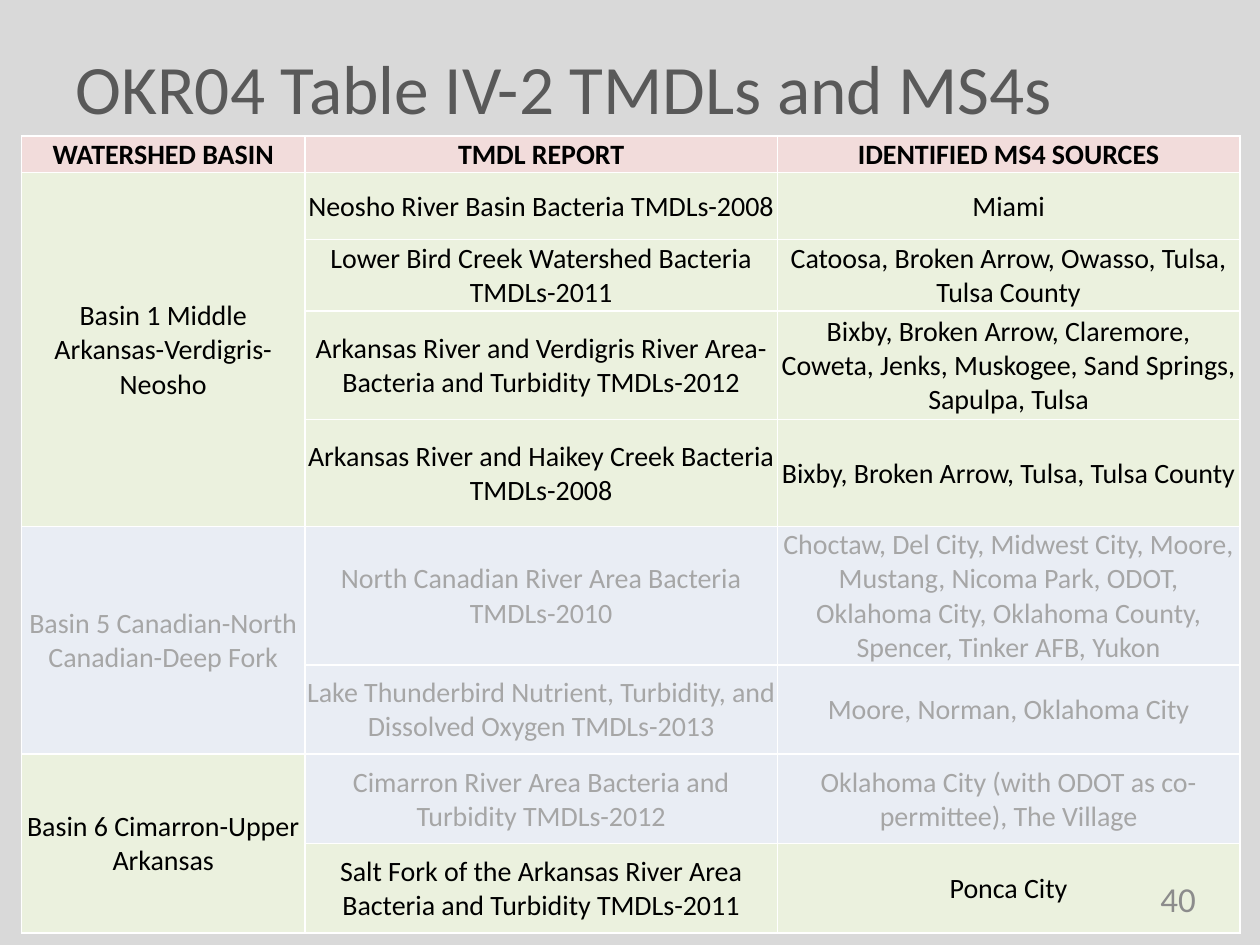
"""Build the slide that lists OKR04 TMDL reports and their MS4 sources by basin."""
from lxml import etree
from pptx import Presentation
from pptx import util as u
from pptx.dml.color import RGBColor
from pptx.enum import text
from pptx.oxml.ns import qn

TITLE = "OKR04 Table IV-2 TMDLs and MS4s"
PAGE = "40"
HEADER = ("WATERSHED BASIN", "TMDL REPORT", "IDENTIFIED MS4 SOURCES")
STYLES = {
    "header": ("F2DCDB", "000000"),
    "active": ("EBF1DE", "000000"),
    "muted": ("E9EDF4", "A6A6A6"),
}
BASINS = [
    ("Basin 1 Middle Arkansas-Verdigris-Neosho", "active", [
        ("Neosho River Basin Bacteria TMDLs-2008", "Miami", "active"),
        ("Lower Bird Creek Watershed Bacteria TMDLs-2011",
         "Catoosa, Broken Arrow, Owasso, Tulsa, Tulsa County", "active"),
        ("Arkansas River and Verdigris River Area-Bacteria and Turbidity TMDLs-2012",
         "Bixby, Broken Arrow, Claremore, Coweta, Jenks, Muskogee, Sand Springs, "
         "Sapulpa, Tulsa", "active"),
        ("Arkansas River and Haikey Creek Bacteria TMDLs-2008",
         "Bixby, Broken Arrow, Tulsa, Tulsa County", "active"),
    ]),
    ("Basin 5 Canadian-North Canadian-Deep Fork", "muted", [
        ("North Canadian River Area Bacteria TMDLs-2010",
         "Choctaw, Del City, Midwest City, Moore, Mustang, Nicoma Park, ODOT, "
         "Oklahoma City, Oklahoma County, Spencer, Tinker AFB, Yukon", "muted"),
        ("Lake Thunderbird Nutrient, Turbidity, and Dissolved Oxygen TMDLs-2013",
         "Moore, Norman, Oklahoma City", "muted"),
    ]),
    ("Basin 6 Cimarron-Upper Arkansas", "active", [
        ("Cimarron River Area Bacteria and Turbidity TMDLs-2012",
         "Oklahoma City (with ODOT as co-permittee), The Village", "muted"),
        ("Salt Fork of the Arkansas River Area Bacteria and Turbidity TMDLs-2011",
         "Ponca City", "active"),
    ]),
]
COL_WIDTHS = (2.25, 3.75, 3.67)
ROW_HEIGHTS = (0.29, 0.53, 0.57, 0.86, 0.85, 1.09, 0.71, 0.71, 0.71)


def rgb(value):
    return RGBColor.from_string(value)


def set_font(p, size, color, bold=False):
    f = p.font
    f.name, f.size, f.bold = "Calibri", u.Pt(size), bold
    f.color.rgb = rgb(color)


def set_borders(cell, color="FFFFFF", width=1):
    pr = cell._tc.get_or_add_tcPr()
    for i, side in enumerate(("a:lnL", "a:lnR", "a:lnT", "a:lnB")):
        ln = etree.Element(qn(side), w=str(u.Pt(width)))
        fill = etree.SubElement(ln, qn("a:solidFill"))
        etree.SubElement(fill, qn("a:srgbClr"), val=color)
        pr.insert(i, ln)


def fill_cell(cell, words, style):
    fill, color = STYLES[style]
    cell.text = words
    cell.fill.solid()
    cell.fill.fore_color.rgb = rgb(fill)
    cell.margin_left = cell.margin_right = cell.margin_top = u.Inches(0.01)
    cell.margin_bottom = 0
    cell.vertical_anchor = text.MSO_ANCHOR.MIDDLE
    p = cell.text_frame.paragraphs[0]
    p.alignment = text.PP_ALIGN.CENTER
    set_font(p, 16, color, style == "header")
    set_borders(cell)


def add_title(s):
    sp = s.shapes.title
    sp.left, sp.top, sp.width, sp.height = map(u.Inches, (0.5, 0.3, 9, 0.78))
    tf = sp.text_frame
    tf.text = TITLE
    tf.auto_size = text.MSO_AUTO_SIZE.NONE
    tf.vertical_anchor = text.MSO_ANCHOR.MIDDLE
    p = tf.paragraphs[0]
    p.alignment = text.PP_ALIGN.LEFT
    set_font(p, 39.6, "595959")


def add_tmdl_table(s):
    box = map(u.Inches, (0.17, 1.08, sum(COL_WIDTHS), sum(ROW_HEIGHTS)))
    table = s.shapes.add_table(len(ROW_HEIGHTS), len(COL_WIDTHS), *box).table
    for col, width in zip(table.columns, COL_WIDTHS):
        col.width = u.Inches(width)
    for row, height in zip(table.rows, ROW_HEIGHTS):
        row.height = u.Inches(height)
    for c, words in enumerate(HEADER):
        fill_cell(table.cell(0, c), words, "header")
    top = 1
    for basin, basin_style, reports in BASINS:
        for r, (report, sources, style) in enumerate(reports, top):
            fill_cell(table.cell(r, 0), basin if r == top else "", basin_style)
            fill_cell(table.cell(r, 1), report, style)
            fill_cell(table.cell(r, 2), sources, style)
        table.cell(top, 0).merge(table.cell(r, 0))
        top = r + 1


def add_page_number(s):
    tf = s.shapes.add_textbox(*map(u.Inches, (8.42, 6.93, 1.17, 0.4))).text_frame
    tf.word_wrap = True
    tf.vertical_anchor = text.MSO_ANCHOR.MIDDLE
    p = tf.paragraphs[0]
    p.text = PAGE
    p.alignment = text.PP_ALIGN.RIGHT
    set_font(p, 20, "8C8C8C")


def main():
    prs = Presentation()
    prs.slide_width, prs.slide_height = u.Inches(10), u.Inches(7.5)
    s = prs.slides.add_slide(prs.slide_layouts[5])
    s.background.fill.solid()
    s.background.fill.fore_color.rgb = rgb("D9D9D9")
    add_title(s)
    add_tmdl_table(s)
    add_page_number(s)
    prs.save("out.pptx")


if __name__ == "__main__":
    main()
